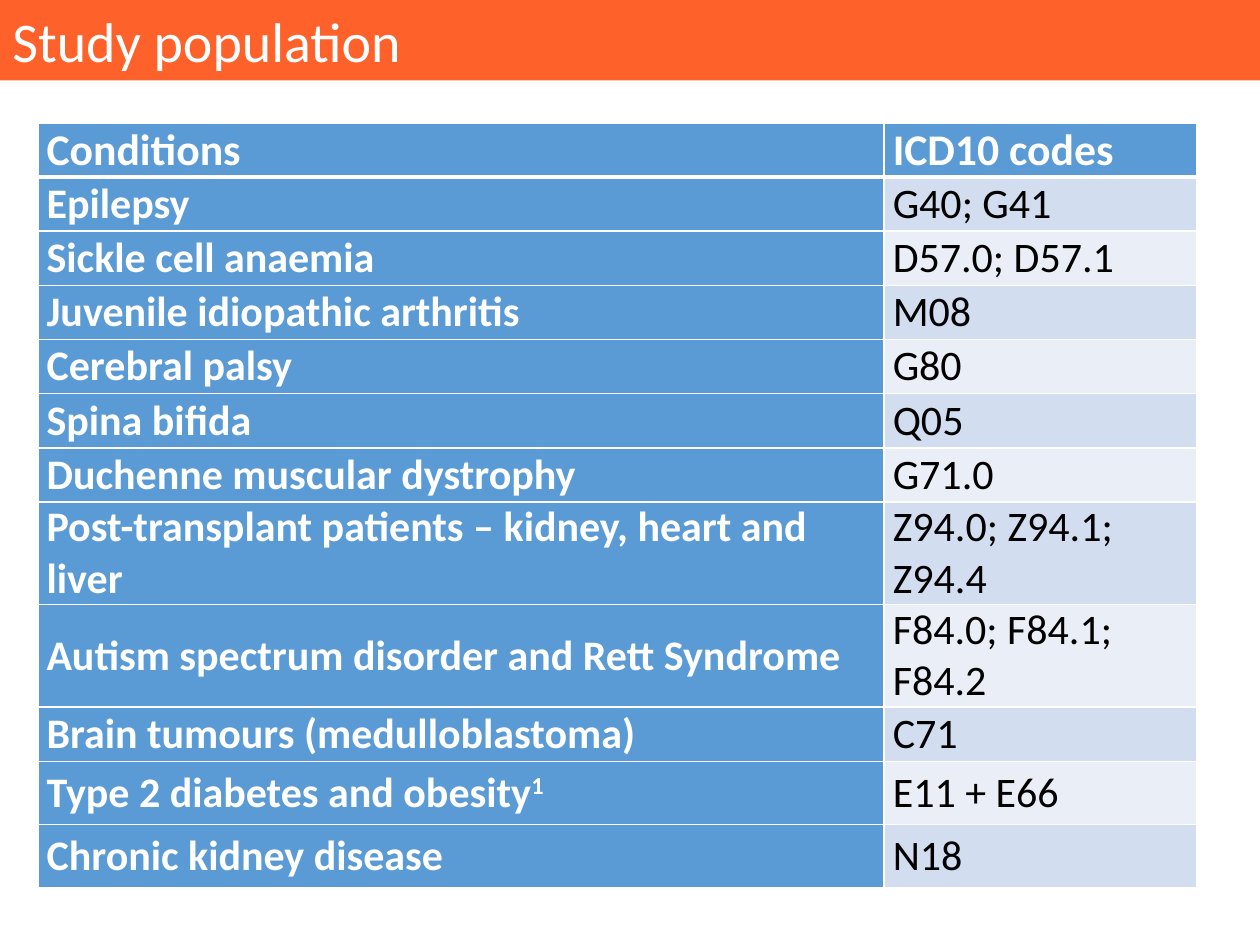
from lxml import etree
from pptx import Presentation
from pptx import util as u
from pptx.dml.color import RGBColor
from pptx.enum import shapes, text
from pptx.oxml.ns import qn

COLORS = {
    "banner": "FE612A",
    "label": "5B9BD5",
    "band_dark": "D2DEEF",
    "band_light": "EAEFF7",
    "white": "FFFFFF",
    "black": "000000",
}
HEADER = ("Conditions", "ICD10 codes")
LINE, TWO_LINES, TALL = 0.43, 0.76, 0.5  # row heights in inches
CONDITIONS = [
    ("Epilepsy", "G40; G41", LINE),
    ("Sickle cell anaemia", "D57.0; D57.1", LINE),
    ("Juvenile idiopathic arthritis", "M08", LINE),
    ("Cerebral palsy", "G80", LINE),
    ("Spina bifida", "Q05", LINE),
    ("Duchenne muscular dystrophy", "G71.0", LINE),
    ("Post-transplant patients – kidney, heart and liver", "Z94.0; Z94.1; Z94.4", TWO_LINES),
    ("Autism spectrum disorder and Rett Syndrome", "F84.0; F84.1; F84.2", TWO_LINES),
    ("Brain tumours (medulloblastoma)", "C71", LINE),
    ("Type 2 diabetes and obesity^1", "E11 + E66", TALL),
    ("Chronic kidney disease", "N18", TALL),
]


class Deck:
    def __init__(self, width=10, height=7.5, font="Calibri"):
        self.prs = Presentation()
        self.prs.slide_width, self.prs.slide_height = u.Inches(width), u.Inches(height)
        self.font = font
        self.s = self.prs.slides.add_slide(self.prs.slide_layouts[6])

    def share(self, x, y, w, h):
        """Turn shares of the slide's size into lengths."""
        sw, sh = self.prs.slide_width, self.prs.slide_height
        return int(x * sw), int(y * sh), int(w * sw), int(h * sh)

    def set_text(self, tf, content, size, color, bold=False):
        """Fill a text frame; what follows a ^ is superscript."""
        p = tf.paragraphs[0]
        p.alignment = text.PP_ALIGN.LEFT
        p.font.name, p.font.size, p.font.bold = self.font, u.Pt(size), bold
        p.font.color.rgb = RGBColor.from_string(COLORS[color])
        base, _, raised = content.partition("^")
        p.add_run().text = base
        if raised:
            r = p.add_run()
            r.text = raised
            r.font._element.set("baseline", "30000")

    def banner(self, title, height):
        sp = self.s.shapes.add_shape(
            shapes.MSO_SHAPE.RECTANGLE, *self.share(0, 0, 1, height))
        sp.shadow.inherit = False
        sp.fill.solid()
        sp.fill.fore_color.rgb = RGBColor.from_string(COLORS["banner"])
        sp.line.fill.background()
        sp.text_frame.vertical_anchor = text.MSO_ANCHOR.MIDDLE
        self.set_text(sp.text_frame, title, 32, "white")

    def borders(self, cell, top=1, bottom=1):
        tc_pr = cell._tc.get_or_add_tcPr()
        for side, width in zip("LRTB", (1, 1, top, bottom)):
            ln = etree.SubElement(tc_pr, qn(f"a:ln{side}"), w=str(u.Pt(width)))
            fill = etree.SubElement(ln, qn("a:solidFill"))
            etree.SubElement(fill, qn("a:srgbClr"), val=COLORS["white"])

    def cell(self, cell, content, size, color, fill, bold):
        cell.margin_left = cell.margin_right = u.Inches(0.07)
        cell.margin_top = cell.margin_bottom = 0
        cell.vertical_anchor = text.MSO_ANCHOR.MIDDLE
        cell.fill.solid()
        cell.fill.fore_color.rgb = RGBColor.from_string(COLORS[fill])
        self.set_text(cell.text_frame, content, size, color, bold)

    def table(self, header, rows, box, first_col):
        """Draw a table; first_col is the first column's share of its width."""
        x, y, w, h = self.share(*box)
        table = self.s.shapes.add_table(len(rows) + 1, 2, x, y, w, h).table
        table.horz_banding = False
        table.columns[0].width = int(w * first_col)
        table.columns[1].width = w - table.columns[0].width
        table.rows[0].height = u.Inches(LINE)
        for j, title in enumerate(header):
            cell = table.cell(0, j)
            self.borders(cell, bottom=3)
            self.cell(cell, title, 25, "white", "label", True)
            cell.vertical_anchor = text.MSO_ANCHOR.BOTTOM
        for i, (condition, codes, height) in enumerate(rows, 1):
            table.rows[i].height = u.Inches(height)
            label, value = table.cell(i, 0), table.cell(i, 1)
            for cell in (label, value):
                self.borders(cell, top=3 if i == 1 else 1)
            band = "band_dark" if i % 2 else "band_light"
            self.cell(label, condition, 24, "white", "label", True)
            self.cell(value, codes, 24, "black", band, False)


def main():
    deck = Deck()
    deck.table(HEADER, CONDITIONS, box=(0.03, 0.13, 0.92, 0.81), first_col=0.73)
    deck.banner("Study population", height=0.085)
    deck.prs.save("out.pptx")


if __name__ == "__main__":
    main()
